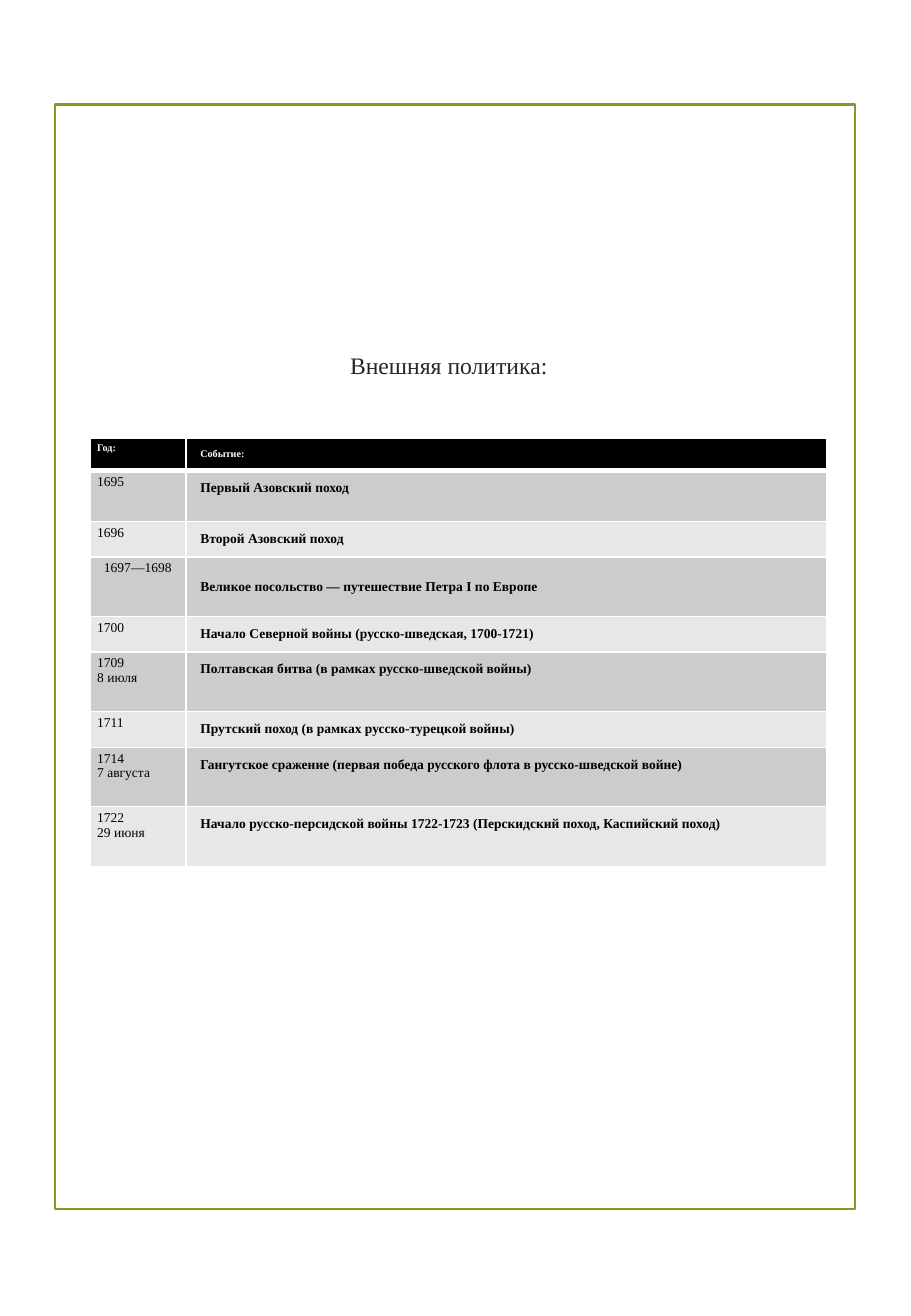
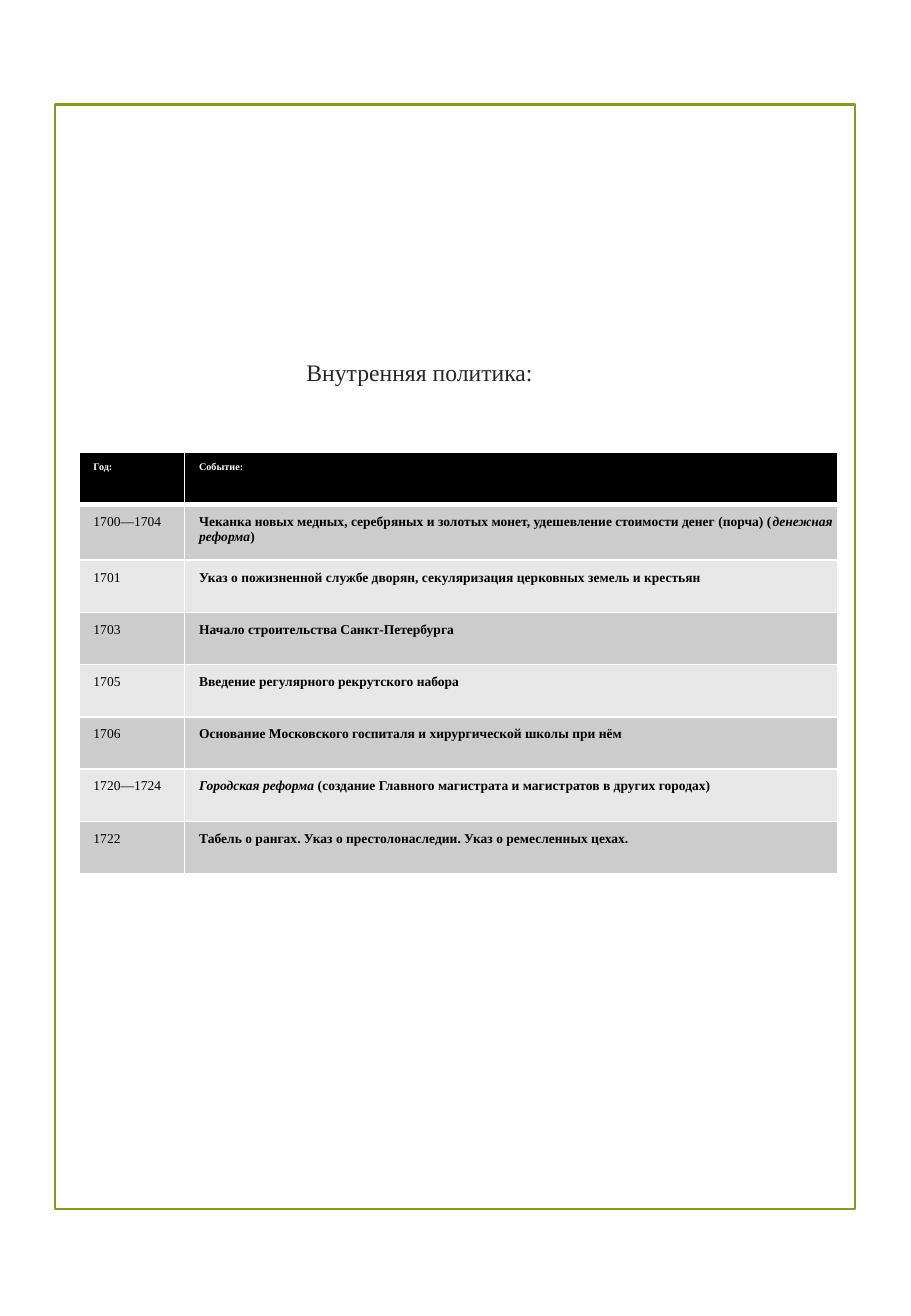
from lxml import etree
from pptx import Presentation
from pptx.dml.color import RGBColor
from pptx.enum import shapes, text
from pptx.oxml.ns import qn
from pptx.util import Inches, Pt

FONT = "Times New Roman"
COLORS = {"frame": "83992A", "title": "262626", "header": "000000", "odd": "CCCCCC",
          "even": "E7E7E7", "grid": "FFFFFF", "body": "000000"}
FRAME = (0.45, 0.86, 6.59, 9.09)
TITLE_SIZE = (5.91, 0.8)
HEADER = ("Год:", "Событие:")
NARROW = (0.06, 0.03, 0.06, 0.03)
WIDE = (0.12, 0.08, 0.04, 0.08)

SLIDES = [
    {
        "title": "Внешняя политика:", "title_at": (0.74, 2.55), "table_at": (0.74, 3.61),
        "cols": (0.79, 5.28), "year_insets": NARROW,
        "heights": (0.24, 0.42, 0.28, 0.49, 0.28, 0.49, 0.28, 0.49, 0.49),
        "centered_row": 3,
        "events": [
            ("1695", "Первый Азовский поход"),
            ("1696", "Второй Азовский поход"),
            ("1697—1698", "Великое посольство — путешествие Петра I по Европе"),
            ("1700", "Начало Северной войны (русско-шведская, 1700-1721)"),
            ("1709\n8 июля", "Полтавская битва (в рамках русско-шведской войны)"),
            ("1711", "Прутский поход (в рамках русско-турецкой войны)"),
            ("1714\n7 августа", "Гангутское сражение (первая победа русского флота в русско-шведской войне)"),
            ("1722\n29 июня", "Начало русско-персидской войны 1722-1723 (Перскидский поход, Каспийский поход)"),
        ],
    },
    {
        "title": "Внутренняя политика:", "title_at": (0.5, 2.6), "table_at": (0.65, 3.72),
        "cols": (0.87, 5.38), "year_insets": WIDE,
        "heights": (0.43, 0.46) + (0.43,) * 6,
        "centered_row": None,
        "events": [
            ("1700—1704", "Чеканка новых медных, серебряных и золотых монет, удешевление стоимости "
                          "денег (порча) (*денежная реформа*)"),
            ("1701", "Указ о пожизненной службе дворян, секуляризация церковных земель и крестьян"),
            ("1703", "Начало строительства Санкт-Петербурга"),
            ("1705", "Введение регулярного рекрутского набора"),
            ("1706", "Основание Московского госпиталя и хирургической школы при нём"),
            ("1720—1724", "*Городская реформа* (создание Главного магистрата и магистратов в других городах)"),
            ("1722", "Табель о рангах. Указ о престолонаследии. Указ о ремесленных цехах."),
        ],
    },
]


def rgb(name):
    return RGBColor.from_string(COLORS[name])


def write(tf, content, size, color, bold=False, align=text.PP_ALIGN.LEFT, spacing=1.0):
    for i, line in enumerate(content.split("\n")):
        p = tf.add_paragraph() if i else tf.paragraphs[0]
        p.alignment, p.line_spacing = align, spacing
        for j, part in enumerate(line.split("*")):
            if part:
                r = p.add_run()
                r.text = part
                r.font.name, r.font.size = FONT, Pt(size)
                r.font.bold, r.font.italic = bold, j % 2 == 1
                r.font.color.rgb = rgb(color)


def set_borders(cell, top, bottom):
    tcPr = cell._tc.get_or_add_tcPr()
    for side, width in (("L", 1), ("R", 1), ("T", top), ("B", bottom)):
        ln = etree.SubElement(tcPr, qn(f"a:ln{side}"), w=str(Pt(width)))
        fill = etree.SubElement(ln, qn("a:solidFill"))
        etree.SubElement(fill, qn("a:srgbClr"), val=COLORS["grid"])


def add_frame(s):
    sp = s.shapes.add_shape(shapes.MSO_SHAPE.RECTANGLE, *map(Inches, FRAME))
    sp.shadow.inherit = False
    sp.fill.background()
    sp.line.color.rgb = rgb("frame")
    sp.line.width = Pt(1.25)


def add_title(s, content, at):
    tf = s.shapes.add_textbox(*map(Inches, at + TITLE_SIZE)).text_frame
    tf.word_wrap = True
    tf.vertical_anchor = text.MSO_ANCHOR.MIDDLE
    write(tf, content, 14, "title", align=text.PP_ALIGN.CENTER, spacing=1.5)


def add_events(s, data):
    rows = [HEADER] + data["events"]
    size = (sum(data["cols"]), sum(data["heights"]))
    table = s.shapes.add_table(len(rows), len(HEADER), *map(Inches, data["table_at"] + size)).table
    table.horz_banding = False
    for column, width in zip(table.columns, data["cols"]):
        column.width = Inches(width)
    for i, (row, height) in enumerate(zip(rows, data["heights"])):
        table.rows[i].height = Inches(height)
        fill = "header" if i == 0 else "odd" if i % 2 else "even"
        centered = i == data["centered_row"]
        for j, content in enumerate(row):
            cell = table.cell(i, j)
            insets = WIDE if j else data["year_insets"]
            cell.margin_left, cell.margin_top, cell.margin_right, cell.margin_bottom = map(Inches, insets)
            cell.vertical_anchor = text.MSO_ANCHOR.MIDDLE if centered and j else text.MSO_ANCHOR.TOP
            set_borders(cell, top=3 if i == 1 else 1, bottom=3 if i == 0 else 1)
            cell.fill.solid()
            cell.fill.fore_color.rgb = rgb(fill)
            write(cell.text_frame, content, 8 if i else 6, "body" if i else "grid",
                  bold=i == 0 or j == 1,
                  align=text.PP_ALIGN.CENTER if centered and j == 0 else text.PP_ALIGN.LEFT)


def main():
    prs = Presentation()
    prs.slide_width, prs.slide_height = Inches(7.5), Inches(10.83)
    for data in SLIDES:
        s = prs.slides.add_slide(prs.slide_layouts[6])
        add_frame(s)
        add_title(s, data["title"], data["title_at"])
        add_events(s, data)
    prs.save("out.pptx")


if __name__ == "__main__":
    main()
